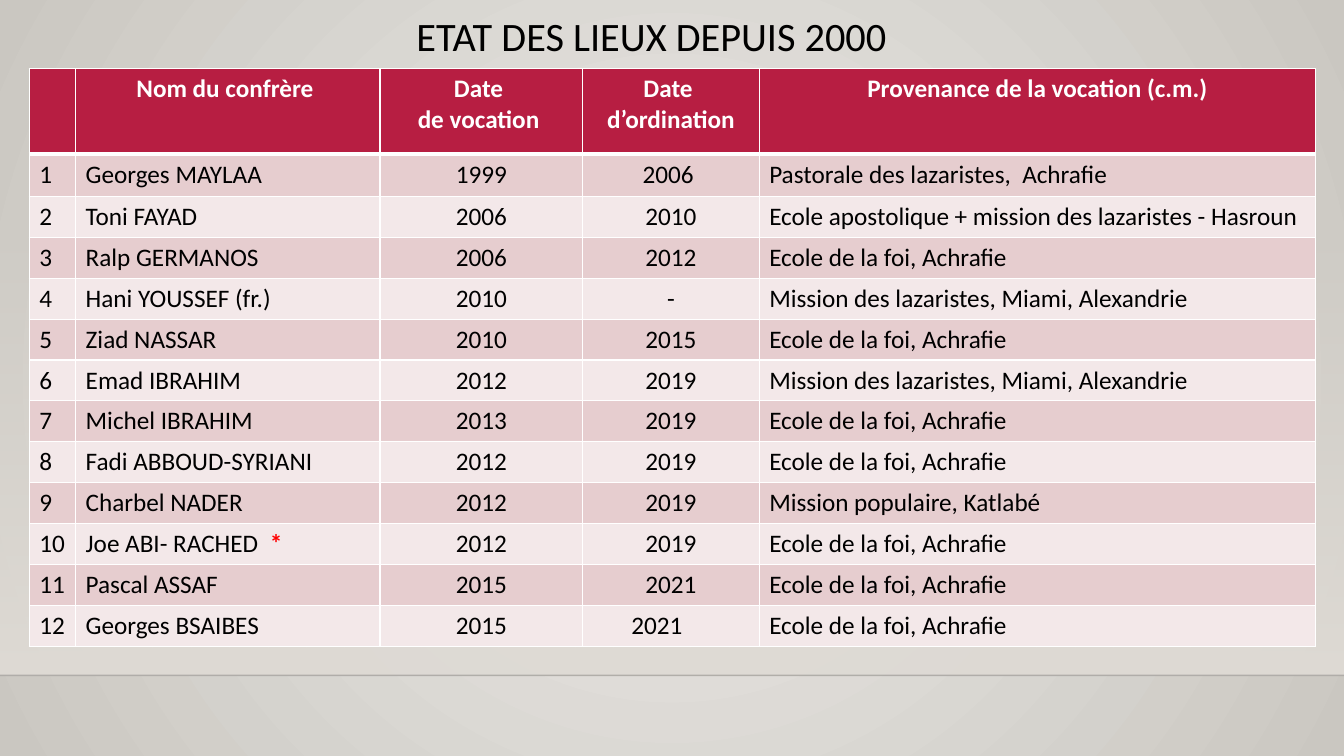
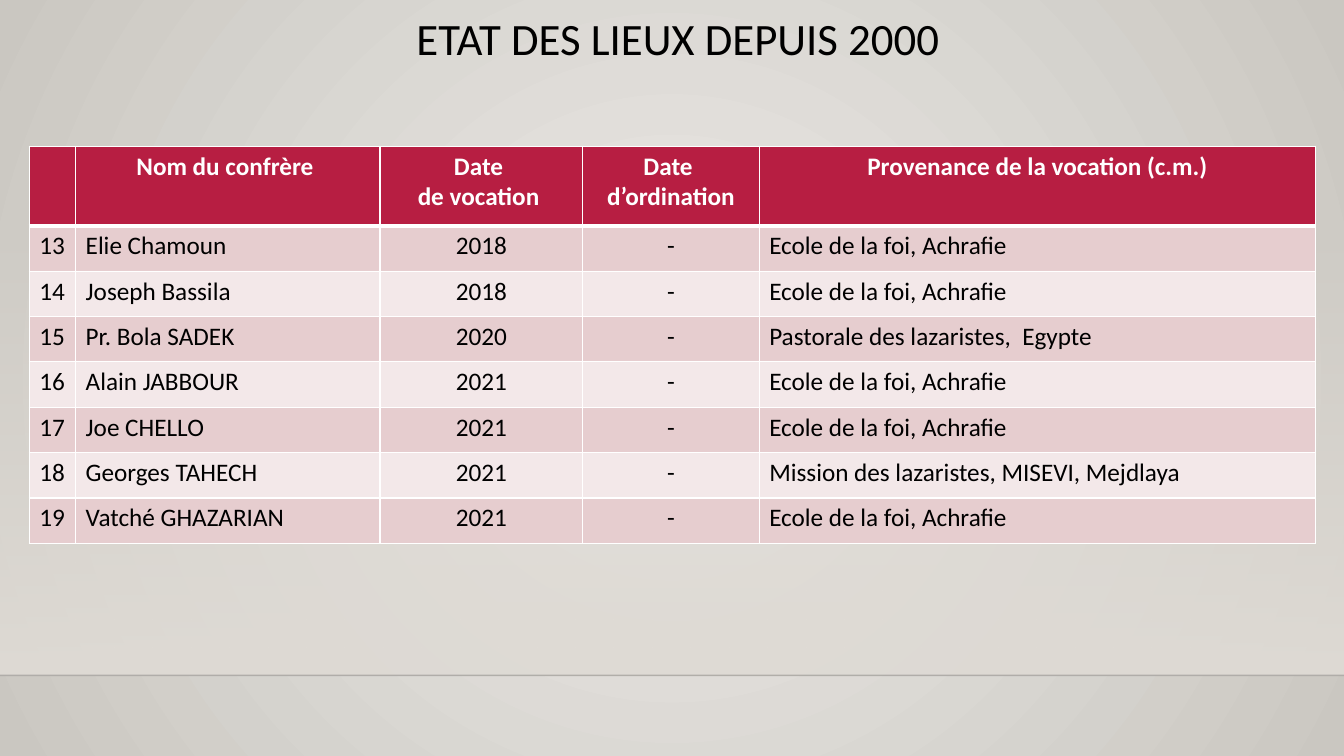
"""Build two slides listing the confrères who joined since 2000."""
from pptx import Presentation
from pptx import util as u
from pptx.dml.color import RGBColor
from pptx.enum import shapes, text
from pptx.oxml import parse_xml
from pptx.oxml.ns import nsdecls

HUE = {"red": "B71E42", "rose": "E6CDCF", "pale": "F3E8E9", "white": "FFFFFF", "black": "000000",
       "star": "FF0000", "glow": "ECEAE7", "edge": "CAC7C1", "band": "DFDBD5", "rule": "000001"}
WIDE, HIGH = u.Inches(13.33), u.Inches(7.5)
FLOOR = u.Inches(6.7)
COLS = [0.46, 3.02, 2.01, 1.75, 5.52]
HEAD = ["", "Nom du confrère ", "Date \nde vocation ", "Date \nd’ordination",
        "Provenance de la vocation (c.m.)"]
FOI = "Ecole de la foi, Achrafie"
MIAMI = "Mission des lazaristes, Miami, Alexandrie"
SIDES = {"lnL": 1, "lnR": 1, "lnT": 1, "lnB": 1}
PAGES = [
    {"size": 28.8, "tall": 0.57, "top": 0.68, "rows": [0.85, 0.42] + [0.4] * 11, "first": 1, "list": [
        ("Georges MAYLAA", "1999", "2006 ", "Pastorale des lazaristes,  Achrafie"),
        ("Toni FAYAD", "2006", "2010", "Ecole apostolique + mission des lazaristes - Hasroun"),
        ("Ralp GERMANOS", "2006", "2012", FOI),
        ("Hani YOUSSEF (fr.)", "2010", "-", MIAMI),
        ("Ziad NASSAR", "2010", "2015", FOI),
        ("Emad IBRAHIM", "2012", "2019", MIAMI),
        ("Michel IBRAHIM", "2013", "2019", FOI),
        ("Fadi ABBOUD-SYRIANI", "2012", "2019", FOI),
        ("Charbel NADER", "2012", "2019", "Mission populaire, Katlabé"),
        ("Joe ABI- RACHED  *", "2012", "2019", FOI),
        ("Pascal ASSAF", "2015", "2021", FOI),
        ("Georges BSAIBES", "2015", "2021", FOI)]},
    {"size": 32, "tall": 0.96, "top": 1.45, "rows": [0.79] + [0.45] * 7, "first": 13, "list": [
        ("Elie Chamoun", "2018", "-", FOI),
        ("Joseph Bassila", "2018", "-", FOI),
        ("Pr. Bola SADEK", "2020", "-", "Pastorale des lazaristes,  Egypte"),
        ("Alain JABBOUR", "2021", "-", FOI),
        ("Joe CHELLO", "2021", "-", FOI),
        ("Georges TAHECH", "2021", "-", "Mission des lazaristes, MISEVI, Mejdlaya"),
        ("Vatché GHAZARIAN", "2021", "-", FOI)]},
]


def style(font, hue, **form):
    """Set the font, its colour and any further format values."""
    for key, val in {"name": "Calibri", **form}.items():
        setattr(font, key, val)
    font.color.rgb = RGBColor.from_string(HUE[hue])


def blend(fill, stops, tail):
    """Replace a solid fill element by a gradient."""
    marks = "".join(f'<a:gs pos="{pos}"><a:srgbClr val="{HUE[hue]}"><a:alpha val="{alpha}"/>'
                    f'</a:srgbClr></a:gs>' for pos, hue, alpha in stops)
    fill.getparent().replace(fill, parse_xml(
        f'<a:gradFill {nsdecls("a")} rotWithShape="1"><a:gsLst>{marks}</a:gsLst>{tail}</a:gradFill>'))


deck = Presentation()
deck.slide_width, deck.slide_height = WIDE, HIGH
plan = deck.slide_layouts[5]
for spot in list(plan.placeholders):
    if spot.placeholder_format.idx:
        spot.element.getparent().remove(spot.element)
plan.background.fill.solid()
blend(plan.element.xpath(".//p:bgPr/a:solidFill")[0],
      [(0, "glow", 100000), (100000, "edge", 100000)],
      '<a:path path="circle"><a:fillToRect l="50000" t="50000" r="50000" b="50000"/></a:path>')

pages = [deck.slides.add_slide(plan) for _ in PAGES]
draw = pages[0].shapes
band = draw.add_shape(shapes.MSO_SHAPE.RECTANGLE, 0, u.Inches(2.21), WIDE, FLOOR - u.Inches(2.21))
band.shadow.inherit = False
band.line.fill.background()
band.fill.solid()
blend(band.element.xpath("./p:spPr/a:solidFill")[0],
      [(0, "band", 0), (100000, "band", 100000)], '<a:lin ang="5400000" scaled="0"/>')
rule = draw.add_connector(shapes.MSO_CONNECTOR.STRAIGHT, 0, FLOOR, WIDE, FLOOR)
rule.line.width = u.Pt(1)
rule.line.color.rgb = RGBColor.from_string(HUE["rule"])
rule.element.xpath(".//a:ln//a:srgbClr")[0].append(
    parse_xml(f'<a:alpha {nsdecls("a")} val="20000"/>'))
rule.element.spPr.append(parse_xml(f'<a:effectLst {nsdecls("a")}/>'))
for part in (rule, band):
    plan.shapes.element.insert(2, part.element)

for slide, page in zip(pages, PAGES):
    title = slide.shapes.title
    place = {"left": 4.03, "top": 0.12, "width": 7.49, "height": page["tall"]}
    for key, val in place.items():
        setattr(title, key, u.Inches(val))
    frame = title.text_frame
    frame.text = "ETAT DES LIEUX DEPUIS 2000"
    frame.word_wrap = True
    frame.auto_size = text.MSO_AUTO_SIZE.NONE
    frame.vertical_anchor = text.MSO_ANCHOR.TOP
    para = frame.paragraphs[0]
    para.alignment, para.line_spacing = text.PP_ALIGN.LEFT, 0.9
    style(para.runs[0].font, "black", size=u.Pt(page["size"]))

    body = [(str(num), *row) for num, row in enumerate(page["list"], page["first"])]
    grid = slide.shapes.add_table(len(body) + 1, len(COLS), u.Inches(0.29), u.Inches(page["top"]),
                                  u.Inches(sum(COLS)), u.Inches(sum(page["rows"]))).table
    for col, wide in zip(grid.columns, COLS):
        col.width = u.Inches(wide)
    for line, tall in zip(grid.rows, page["rows"]):
        line.height = u.Inches(tall)
    for r, row in enumerate([HEAD] + body):
        sides = {**SIDES, **{0: {"lnB": 3}, 1: {"lnT": 3}}.get(r, {})}
        for c, words in enumerate(row):
            cell = grid.cell(r, c)
            props = cell._tc.get_or_add_tcPr()
            for side, thick in sides.items():
                props.append(parse_xml(
                    f'<a:{side} {nsdecls("a")} w="{u.Pt(thick)}"><a:solidFill>'
                    f'<a:srgbClr val="{HUE["white"]}"/></a:solidFill></a:{side}>'))
            cell.fill.solid()
            shade = "red" if r == 0 else ("pale", "rose")[r % 2]
            cell.fill.fore_color.rgb = RGBColor.from_string(HUE[shade])
            name, star, _ = words.partition("*")
            cell.text_frame.text = name
            for para in cell.text_frame.paragraphs:
                if r == 0 or c in (2, 3):
                    para.alignment = text.PP_ALIGN.CENTER
                for run in para.runs:
                    style(run.font, "black" if r else "white", size=u.Pt(18), bold=r == 0)
            if star:
                run = para.add_run()
                run.text = star
                style(run.font, "star", size=u.Pt(18), bold=True)
            if c == 0:
                cell.margin_right = u.Inches(0.05)
            if row[1] == "Georges BSAIBES" and c == 3:
                cell.margin_right = u.Inches(0.38)

deck.save("out.pptx")
